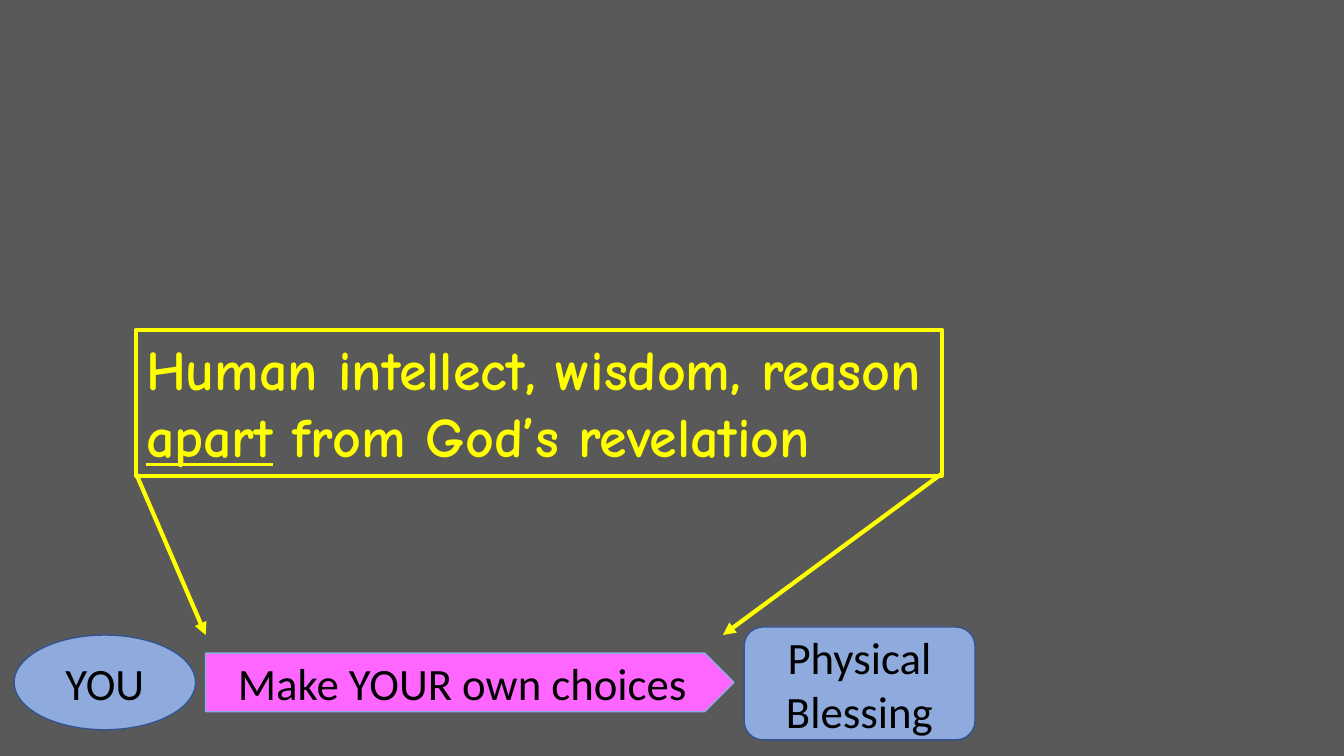
import pptx
import pptx.util
import pptx.dml.color
import pptx.enum.shapes
import pptx.enum.text
import pptx.oxml
import pptx.oxml.ns

Inches, Pt = pptx.util.Inches, pptx.util.Pt
SHAPE = pptx.enum.shapes.MSO_SHAPE
ALIGN = pptx.enum.text.PP_ALIGN
ANCHOR = pptx.enum.text.MSO_ANCHOR

COLORS = {
    "background": "595959",
    "blue": "8FAADC",
    "blue_edge": "325491",
    "pink": "FF66FF",
    "yellow": "FFFF00",
    "black": "000000",
}
STEP_FONT = {"name": "Calibri", "size": Pt(32)}
NOTE_FONT = {"name": "Comic Neue", "size": Pt(40), "bold": True}


def rgb(name):
    return pptx.dml.color.RGBColor.from_string(COLORS[name])


class SlideBuilder:
    def __init__(self, prs):
        self.slide = prs.slides.add_slide(prs.slide_layouts[6])
        fill = self.slide.background.fill
        fill.solid()
        fill.fore_color.rgb = rgb("background")

    def outline(self, line, color, width):
        line.color.rgb = rgb(color)
        line.width = Pt(width)

    def add_text(self, p, text, color, font):
        r = p.add_run()
        r.text = text
        r.font.color.rgb = rgb(color)
        for key, value in font.items():
            setattr(r.font, key, value)

    def shape(self, kind, box, fill, edge, width):
        sp = self.slide.shapes.add_shape(kind, *map(Inches, box))
        sp.shadow.inherit = False
        if fill:
            sp.fill.solid()
            sp.fill.fore_color.rgb = rgb(fill)
        else:
            sp.fill.background()
        self.outline(sp.line, edge, width)
        sp.text_frame.word_wrap = True
        return sp

    def step(self, kind, box, text, fill, edge):
        tf = self.shape(kind, box, fill, edge, 1).text_frame
        tf.vertical_anchor = ANCHOR.MIDDLE
        p = tf.paragraphs[0]
        p.alignment = ALIGN.CENTER
        self.add_text(p, text, "black", STEP_FONT)

    def note(self, box, parts):
        tf = self.shape(SHAPE.RECTANGLE, box, None, "yellow", 3).text_frame
        tf.vertical_anchor = ANCHOR.TOP
        p = tf.paragraphs[0]
        p.alignment = ALIGN.LEFT
        for text, underline in parts:
            self.add_text(p, text, "yellow", {**NOTE_FONT, "underline": underline})

    def arrow(self, start, end):
        line = self.slide.shapes.add_connector(
            pptx.enum.shapes.MSO_CONNECTOR.STRAIGHT, *map(Inches, start + end))
        self.outline(line.line, "yellow", 3)
        ns = pptx.oxml.ns.nsdecls("a")
        props = line._element.spPr
        props.find(pptx.oxml.ns.qn("a:ln")).append(
            pptx.oxml.parse_xml(f'<a:tailEnd {ns} type="triangle"/>'))
        props.append(pptx.oxml.parse_xml(f"<a:effectLst {ns}/>"))


def main():
    prs = pptx.Presentation()
    prs.slide_width, prs.slide_height = Inches(13.33), Inches(7.5)
    s = SlideBuilder(prs)

    # Bottom row: from you, through choices, to blessing
    s.step(SHAPE.OVAL, (0.14, 6.3, 1.8, 0.94), "YOU", "blue", "blue_edge")
    s.step(SHAPE.PENTAGON, (2.04, 6.48, 5.24, 0.58),
           "Make YOUR own choices", "pink", "blue")
    s.step(SHAPE.ROUNDED_RECTANGLE, (7.38, 6.22, 2.29, 1.12),
           "Physical Blessing", "blue", "blue_edge")

    # Boxed explanation
    left, width = 1.35, 7.99
    s.note((left, 3.27, width, 1.45), [
        ("Human intellect, wisdom, reason ", False),
        ("apart", True),
        (" from God’s revelation", False),
    ])

    # Arrows from the box corners to the choices
    for start_x, end_x in ((left, 2.04), (left + width, 7.17)):
        s.arrow((start_x, 4.7), (end_x, 6.3))

    prs.save("out.pptx")


if __name__ == "__main__":
    main()
